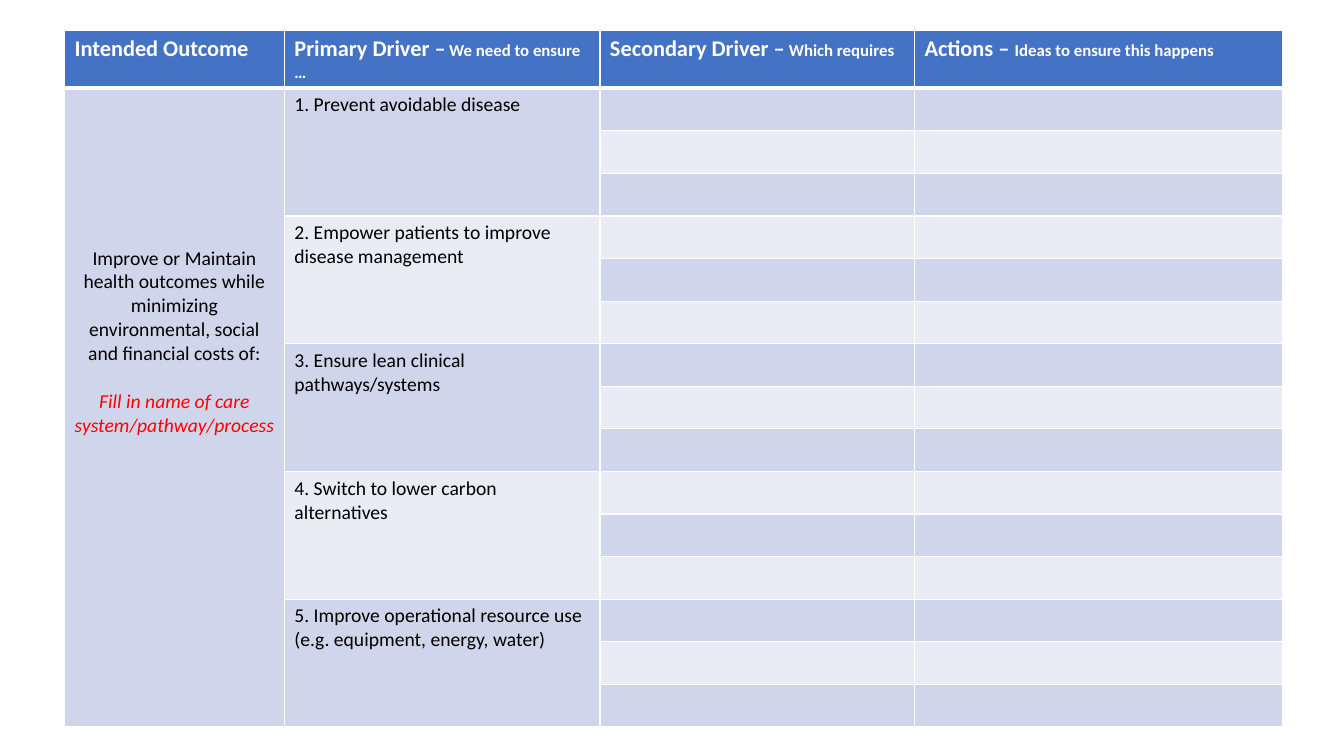
import dataclasses

import lxml.etree
import pptx
import pptx.dml.color
import pptx.enum.text
import pptx.oxml.ns
import pptx.table
import pptx.text.text
import pptx.util

Inches = pptx.util.Inches

WHITE, BLACK, RED, BLUE = "FFFFFF", "000000", "FF0000", "4472C4"
BANDS = ("CFD5EA", "E9EBF5")
COLUMN_WIDTHS = (2.18, 3.13, 3.12, 3.65)
HEADER_HEIGHT, TABLE_HEIGHT = 0.56, 6.9
ROWS_PER_DRIVER = 3


@dataclasses.dataclass(frozen=True)
class TextRun:
    text: str
    size: int = 14
    color: str = BLACK
    bold: bool = False
    italic: bool = False


def heading(title: str, *details: tuple[str, int]) -> list[TextRun]:
    parts = [(title, 16), *details]
    return [TextRun(text, size, WHITE, bold=True) for text, size in parts]


HEADINGS = [
    heading("Intended Outcome"),
    heading("Primary Driver –", (" ", 10), ("We need to ensure …", 12)),
    heading("Secondary Driver –", (" Which requires", 12)),
    heading("Actions – ", ("Ideas to ensure this happens", 12)),
]
OUTCOME = [
    TextRun("Improve or Maintain health outcomes while minimizing "
            "environmental, social and financial costs of:"),
    TextRun("Fill in name of care system/pathway/process", color=RED, italic=True),
]
PRIMARY_DRIVERS = [
    "Prevent avoidable disease",
    "Empower patients to improve disease management",
    "Ensure lean clinical pathways/systems",
    "Switch to lower carbon alternatives",
    "Improve operational resource use (e.g. equipment, energy, water)",
]
DRIVER_ROWS = ROWS_PER_DRIVER * len(PRIMARY_DRIVERS)


def rgb(color: str) -> pptx.dml.color.RGBColor:
    return pptx.dml.color.RGBColor.from_string(color)


def add_run(paragraph: pptx.text.text._Paragraph, text_run: TextRun) -> None:
    run = paragraph.add_run()
    run.text = text_run.text
    run.font.name = "Calibri"
    run.font.size = pptx.util.Pt(text_run.size)
    run.font.bold = text_run.bold
    run.font.italic = text_run.italic
    run.font.color.rgb = rgb(text_run.color)


def style_cell(cell: pptx.table._Cell, fill: str, top: int = 1, bottom: int = 1) -> None:
    """Give a cell white borders, with widths in points, and a solid fill."""
    properties = cell._tc.get_or_add_tcPr()
    qn = pptx.oxml.ns.qn
    for side, width in (("L", 1), ("R", 1), ("T", top), ("B", bottom)):
        line = lxml.etree.SubElement(properties, qn(f"a:ln{side}"), w=str(pptx.util.Pt(width)))
        solid_fill = lxml.etree.SubElement(line, qn("a:solidFill"))
        lxml.etree.SubElement(solid_fill, qn("a:srgbClr"), val=WHITE)
    cell.fill.solid()
    cell.fill.fore_color.rgb = rgb(fill)


def add_driver_table(slide: pptx.slide.Slide) -> pptx.table.Table:
    frame = slide.shapes.add_table(
        DRIVER_ROWS + 1, len(COLUMN_WIDTHS), Inches(0.64), Inches(0.3),
        Inches(sum(COLUMN_WIDTHS)), Inches(TABLE_HEIGHT))
    table = frame.table
    table.horz_banding = False
    for column, width in zip(table.columns, COLUMN_WIDTHS):
        column.width = Inches(width)
    for row in table.rows:
        row.height = Inches((TABLE_HEIGHT - HEADER_HEIGHT) / DRIVER_ROWS)
    table.rows[0].height = Inches(HEADER_HEIGHT)
    return table


def fill_header(table: pptx.table.Table) -> None:
    for column, text_runs in enumerate(HEADINGS):
        cell = table.cell(0, column)
        style_cell(cell, BLUE, bottom=3)
        for text_run in text_runs:
            add_run(cell.text_frame.paragraphs[0], text_run)


def fill_bands(table: pptx.table.Table) -> None:
    for row in range(DRIVER_ROWS):
        driver_band = BANDS[row // ROWS_PER_DRIVER % 2]
        row_band = BANDS[row % 2]
        for column, fill in enumerate((BANDS[0], driver_band, row_band, row_band)):
            style_cell(table.cell(row + 1, column), fill, top=1 if row else 3)


def fill_outcome(table: pptx.table.Table) -> None:
    cell = table.cell(1, 0)
    cell.merge(table.cell(DRIVER_ROWS, 0))
    cell.margin_top = Inches(1.57)
    text_frame = cell.text_frame
    for index, text_run in enumerate(OUTCOME):
        paragraph = text_frame.add_paragraph() if index else text_frame.paragraphs[0]
        paragraph.alignment = pptx.enum.text.PP_ALIGN.CENTER
        if index:
            paragraph.space_before = pptx.util.Pt(17)
        add_run(paragraph, text_run)


def fill_primary_drivers(table: pptx.table.Table) -> None:
    for index, driver in enumerate(PRIMARY_DRIVERS):
        first_row = 1 + index * ROWS_PER_DRIVER
        cell = table.cell(first_row, 1)
        cell.merge(table.cell(first_row + ROWS_PER_DRIVER - 1, 1))
        add_run(cell.text_frame.paragraphs[0], TextRun(f"{index + 1}. {driver}"))


def main() -> None:
    presentation = pptx.Presentation()
    presentation.slide_width = Inches(13.33)
    presentation.slide_height = Inches(7.5)
    slide = presentation.slides.add_slide(presentation.slide_layouts[6])

    # Driver diagram: header, banded rows, then the merged cells
    table = add_driver_table(slide)
    fill_header(table)
    fill_bands(table)
    fill_outcome(table)
    fill_primary_drivers(table)

    presentation.save("out.pptx")


if __name__ == "__main__":
    main()
